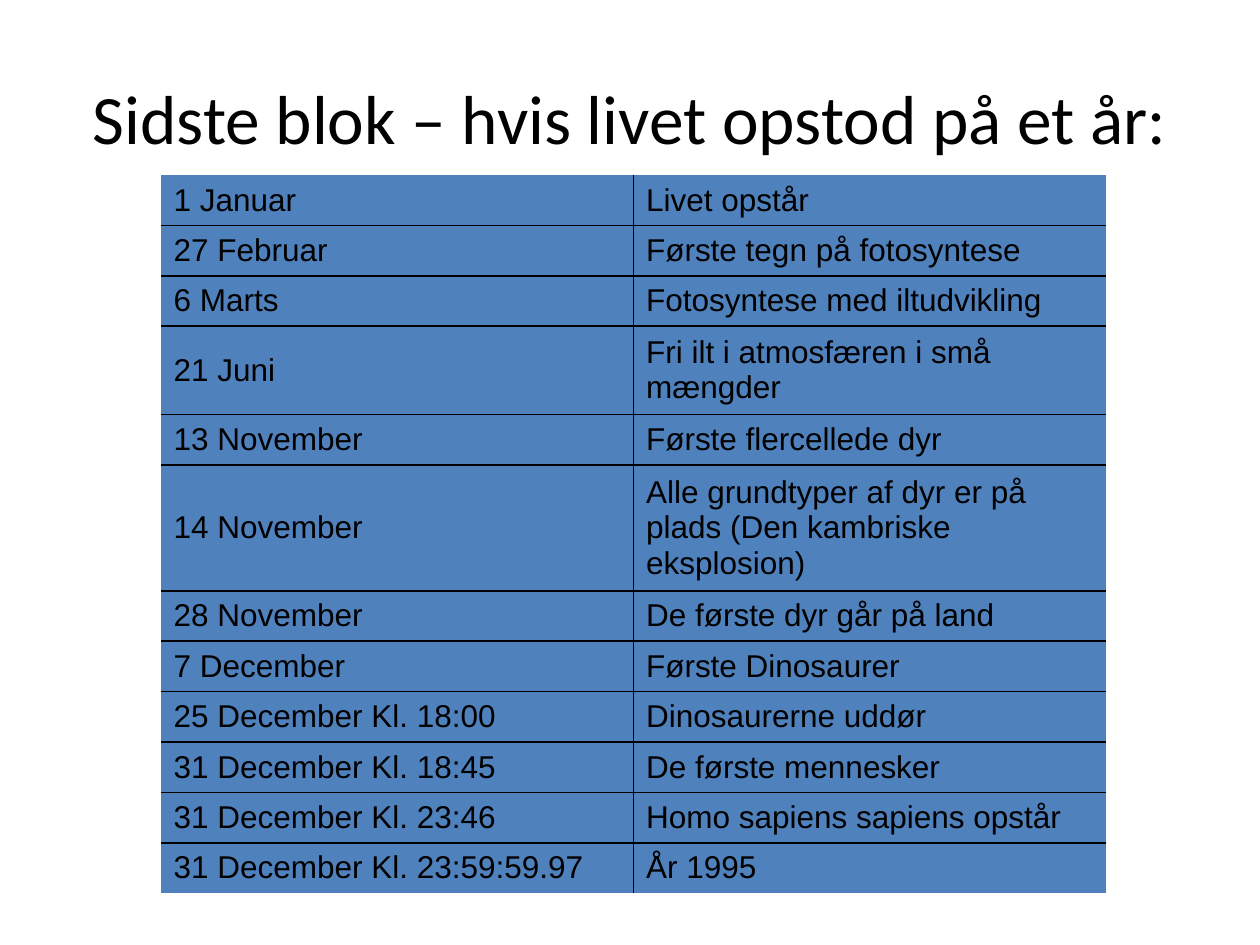
"""Build a slide that maps the history of life onto one year."""
import lxml.etree
import pptx
import pptx.dml.color
import pptx.enum.text
import pptx.oxml.ns
import pptx.util

Pt = pptx.util.Pt
MID = pptx.enum.text.MSO_ANCHOR.MIDDLE
BLACK, BLUE = "000000", "4F81BD"
ROW, LINE = 28.8, 21.6
EVENTS = [
    ("1 Januar", "Livet opstår", 1),
    ("27 Februar", "Første tegn på fotosyntese", 1),
    ("6 Marts", "Fotosyntese med iltudvikling", 1),
    ("21 Juni", "Fri ilt i atmosfæren i små mængder", 2),
    ("13 November", "Første flercellede dyr", 1),
    ("14 November", "Alle grundtyper af dyr er på plads (Den kambriske eksplosion)", 3),
    ("28 November", "De første dyr går på land", 1),
    ("7 December", "Første Dinosaurer", 1),
    ("25 December Kl. 18:00", "Dinosaurerne uddør", 1),
    ("31 December Kl. 18:45", "De første mennesker", 1),
    ("31 December Kl. 23:46", "Homo sapiens sapiens opstår", 1),
    ("31 December Kl. 23:59:59.97", "År 1995", 1),
]


def tint(code):
    """Turn a hex string into a colour."""
    return pptx.dml.color.RGBColor.from_string(code)


def put(item, form):
    """Set each attribute named in a dict of format values."""
    for name, value in form.items():
        setattr(item, name, value)


def style(frame, text, size, face):
    """Write text in a frame with its font."""
    frame.text = text
    font = frame.paragraphs[0].runs[0].font
    put(font, {"size": Pt(size), "name": face, "bold": False})
    font.color.rgb = tint(BLACK)


def edge(cell, sides):
    """Draw the sides marked true and clear the others."""
    qn = pptx.oxml.ns.qn
    props = cell._tc.get_or_add_tcPr()
    for side, drawn in sides.items():
        line = lxml.etree.SubElement(props, qn("a:ln" + side), w=str(Pt(1)))
        if drawn:
            fill = lxml.etree.SubElement(line, qn("a:solidFill"))
            lxml.etree.SubElement(fill, qn("a:srgbClr"), val=BLACK)
        else:
            lxml.etree.SubElement(line, qn("a:noFill"))


def head(slide, box, text):
    """Place the title in its box."""
    title = slide.shapes.title
    put(title, dict(zip(("left", "top", "width", "height"), map(Pt, box))))
    frame = title.text_frame
    style(frame, text, 39.6, "Calibri")
    put(frame, {"word_wrap": True, "vertical_anchor": MID})
    frame.paragraphs[0].alignment = pptx.enum.text.PP_ALIGN.CENTER


def grid(slide, box, events):
    """Place the table of dates and events in its box."""
    last = len(events) - 1
    table = slide.shapes.add_table(len(events), 2, *map(Pt, box)).table
    put(table, {"first_row": False, "horz_banding": False})
    for col in table.columns:
        col.width = Pt(box[2] / 2)
    for r, (date, event, lines) in enumerate(events):
        table.rows[r].height = Pt(ROW + LINE * (lines - 1))
        for c, text in enumerate((date, event)):
            cell = table.cell(r, c)
            style(cell.text_frame, text, 18, "Arial")
            cell.vertical_anchor = MID
            edge(cell, {"L": c > 0, "R": c < 1, "T": r > 0, "B": r < last})
            cell.fill.solid()
            cell.fill.fore_color.rgb = tint(BLUE)


def main():
    """Build and save the slide."""
    deck = pptx.Presentation()
    put(deck, {"slide_width": Pt(720), "slide_height": Pt(540)})
    slide = deck.slides.add_slide(deck.slide_layouts[5])
    head(slide, (36, 21.6, 648, 90), "Sidste blok – hvis livet opstod på et år:")
    grid(slide, (92, 100, 540, 410.4), EVENTS)
    deck.save("out.pptx")


if __name__ == "__main__":
    main()
